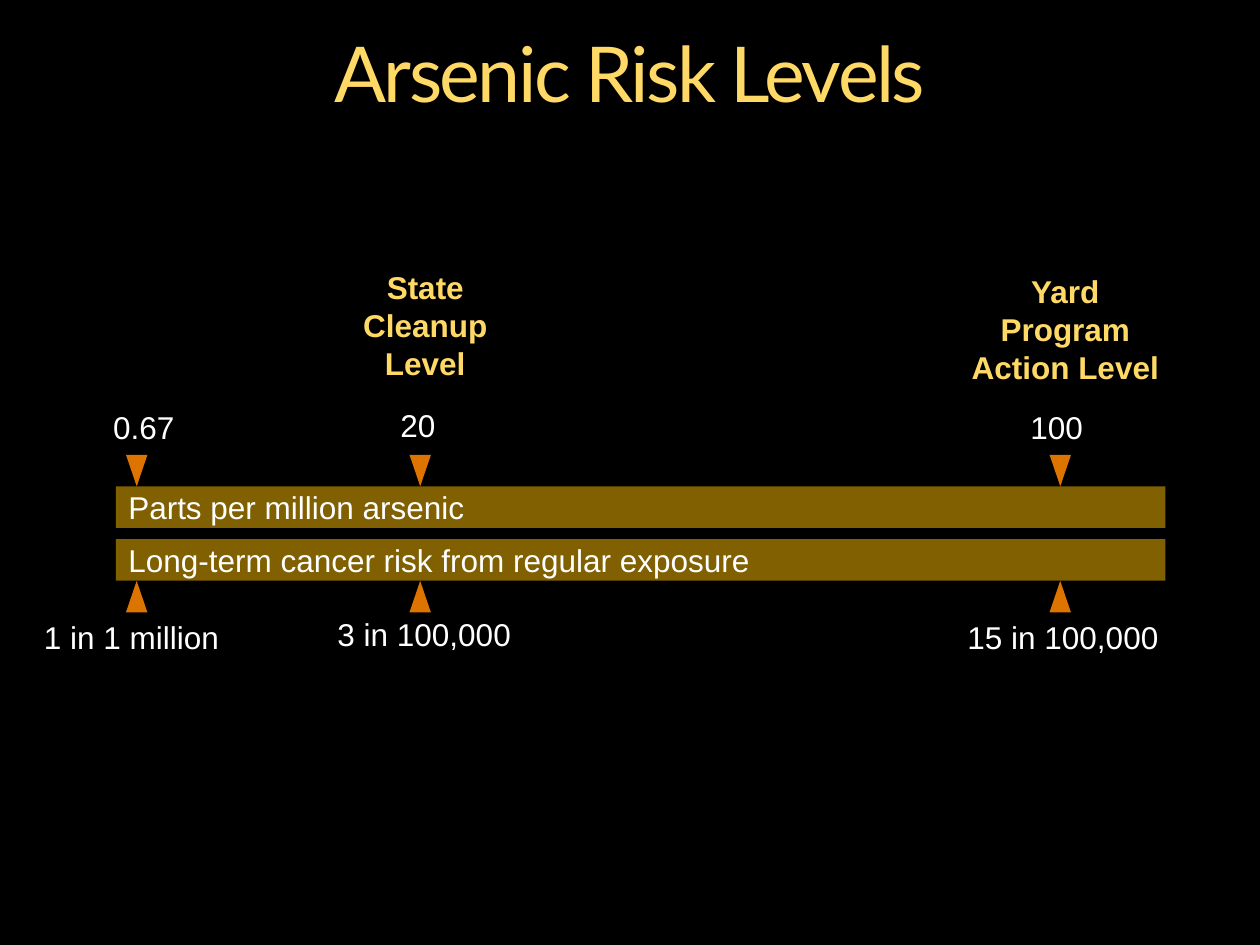
from dataclasses import dataclass

from pptx import Presentation
from pptx.dml.color import RGBColor
from pptx.enum.shapes import MSO_SHAPE
from pptx.enum.text import MSO_ANCHOR, MSO_AUTO_SIZE, PP_ALIGN
from pptx.util import Inches, Pt


@dataclass(frozen=True)
class Theme:
    background: RGBColor = RGBColor(0x00, 0x00, 0x00)
    bar: RGBColor = RGBColor(0x80, 0x60, 0x00)
    marker: RGBColor = RGBColor(0xDE, 0x74, 0x00)
    text: RGBColor = RGBColor(0xFF, 0xFF, 0xFF)
    accent: RGBColor = RGBColor(0xFF, 0xD9, 0x66)
    title_font: str = "Lato"
    body_font: str = "Arial"
    title_size: Pt = Pt(44)
    body_size: Pt = Pt(18)


THEME = Theme()
BAR_LEFT, BAR_WIDTH, BAR_HEIGHT = 0.92, 8.33, 0.33
PPM_TOP, RISK_TOP = 3.86, 4.28
MARKER_WIDTH, MARKER_HEIGHT = 0.17, 0.25
MARKER_LEFTS = (1, 3.25, 8.33)


def format_run(r, color, bold=False):
    r.font.name = THEME.body_font
    r.font.size = THEME.body_size
    r.font.color.rgb = color
    r.font.bold = bold


def add_title(s, text):
    sp = s.shapes.title
    sp.left, sp.top, sp.width, sp.height = map(Inches, (0, 0.25, 10, 0.73))
    tf = sp.text_frame
    tf.text = text
    tf.auto_size = MSO_AUTO_SIZE.NONE
    tf.vertical_anchor = MSO_ANCHOR.MIDDLE
    p = tf.paragraphs[0]
    p.alignment = PP_ALIGN.CENTER
    p.line_spacing = 0.9
    r = p.runs[0]
    r.font.name = THEME.title_font
    r.font.size = THEME.title_size
    r.font.color.rgb = THEME.accent
    r.font._element.set("spc", "-150")


def add_filled(s, kind, color, left, top, width, height):
    sp = s.shapes.add_shape(kind, *map(Inches, (left, top, width, height)))
    sp.shadow.inherit = False
    sp.fill.solid()
    sp.fill.fore_color.rgb = color
    sp.line.fill.background()
    return sp


def add_bar(s, text, top):
    sp = add_filled(s, MSO_SHAPE.RECTANGLE, THEME.bar,
                    BAR_LEFT, top, BAR_WIDTH, BAR_HEIGHT)
    tf = sp.text_frame
    tf.text = text
    tf.vertical_anchor = MSO_ANCHOR.MIDDLE
    p = tf.paragraphs[0]
    p.alignment = PP_ALIGN.LEFT
    format_run(p.runs[0], THEME.text)


def add_marker(s, left, top, rotation):
    sp = add_filled(s, MSO_SHAPE.ISOSCELES_TRIANGLE, THEME.marker,
                    left, top, MARKER_WIDTH, MARKER_HEIGHT)
    sp.rotation = rotation


def add_label(s, text, left, top, width, height=0.4, heading=False):
    sp = s.shapes.add_textbox(*map(Inches, (left, top, width, height)))
    tf = sp.text_frame
    tf.word_wrap = True
    tf.text = text
    p = tf.paragraphs[0]
    p.alignment = PP_ALIGN.CENTER if heading else PP_ALIGN.LEFT
    format_run(p.runs[0], THEME.accent if heading else THEME.text, heading)


def main():
    prs = Presentation()
    prs.slide_width, prs.slide_height = Inches(10), Inches(7.5)
    s = prs.slides.add_slide(prs.slide_layouts[5])
    s.background.fill.solid()
    s.background.fill.fore_color.rgb = THEME.background

    add_title(s, "Arsenic Risk Levels")
    add_bar(s, "Parts per million arsenic", PPM_TOP)
    add_bar(s, "Long-term cancer risk from regular exposure", RISK_TOP)
    for left in MARKER_LEFTS:
        add_marker(s, left, PPM_TOP - MARKER_HEIGHT, 180)
        add_marker(s, left, RISK_TOP + BAR_HEIGHT, 0)

    for text, left, top, width in (
        ("0.67", 0.8, 3.19, 0.7),
        ("20", 3.08, 3.17, 0.5),
        ("100", 8.08, 3.19, 0.75),
        ("1 in 1 million", 0.25, 4.86, 1.67),
        ("3 in 100,000", 2.58, 4.83, 1.67),
        ("15 in 100,000", 7.58, 4.86, 2),
    ):
        add_label(s, text, left, top, width)
    for text, left, top in (
        ("State Cleanup Level", 2.5, 2.08),
        ("Yard Program Action Level", 7.58, 2.11),
    ):
        add_label(s, text, left, top, 1.75, 1.01, heading=True)

    prs.save("out.pptx")


if __name__ == "__main__":
    main()
